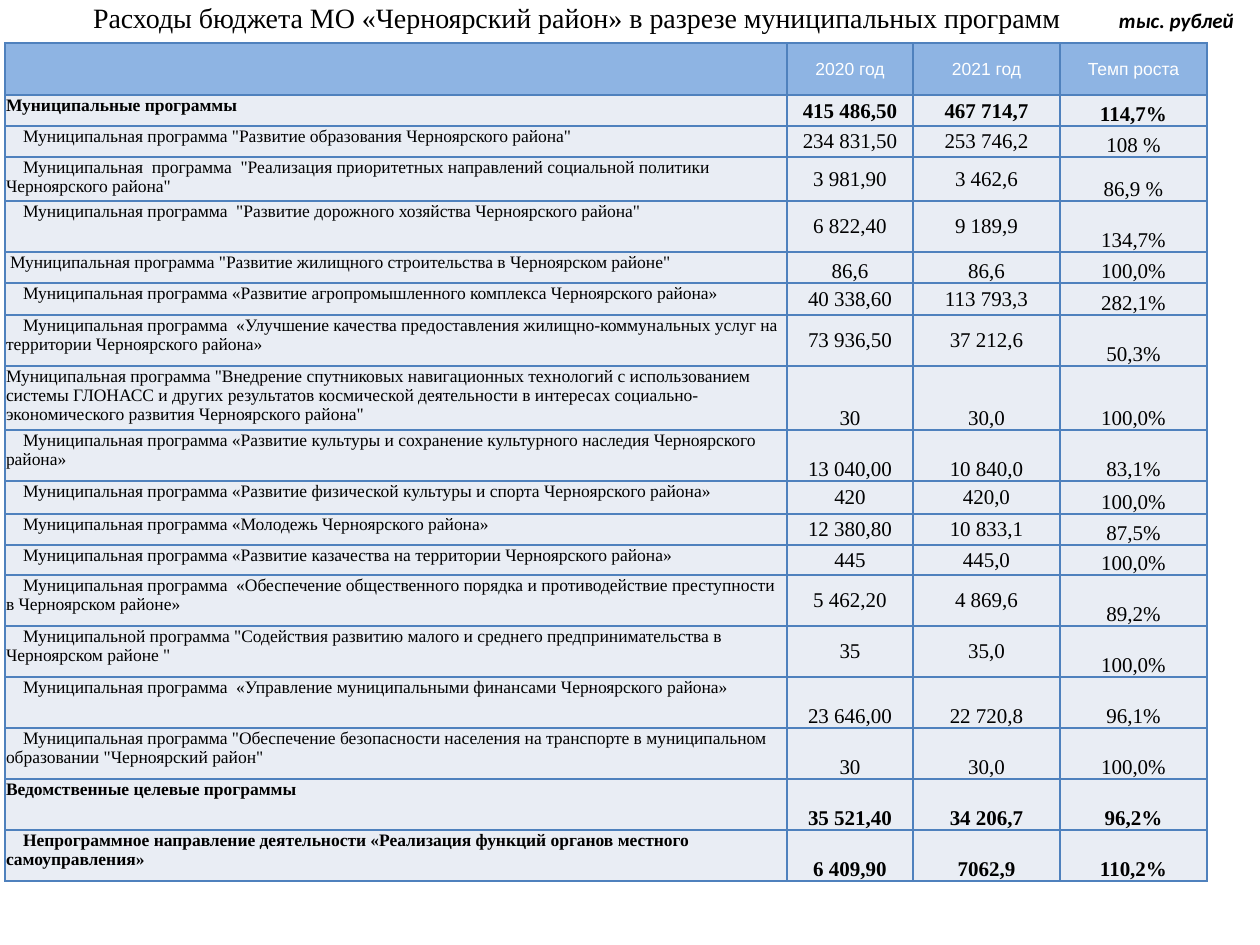
from typing import NamedTuple

from lxml import etree
from pptx import Presentation
from pptx.dml.color import RGBColor
from pptx.enum.text import MSO_ANCHOR, PP_ALIGN
from pptx.oxml.ns import qn
from pptx.util import Pt

TOP, MIDDLE, BOTTOM = MSO_ANCHOR.TOP, MSO_ANCHOR.MIDDLE, MSO_ANCHOR.BOTTOM
LEFT, CENTER = PP_ALIGN.LEFT, PP_ALIGN.CENTER

BLACK = RGBColor(0x00, 0x00, 0x00)
WHITE = RGBColor(0xFF, 0xFF, 0xFF)
HEADER_FILL = RGBColor(0x8E, 0xB4, 0xE3)
BODY_FILL = RGBColor(0xE9, 0xED, 0xF4)
BORDER = RGBColor(0x4F, 0x81, 0xBD)

PX_PER_INCH = 126
INDENT = 17
COLUMNS = (782, 126, 147, 147)
HEADER = ("", "2020 год", "2021 год", "Темп роста")
HEADER_HEIGHT = 52


class Style(NamedTuple):
    font: str
    size: int
    color: RGBColor = BLACK
    bold: bool = False
    italic: bool = False


class Program(NamedTuple):
    name: str
    y2020: str
    y2021: str
    growth: str
    height: int = 51
    anchor: MSO_ANCHOR = MIDDLE
    indent: int = INDENT
    bold: bool = False


PROGRAMS = (
    Program("Муниципальные программы", "415 486,50", "467 714,7", "114,7%",
            31, indent=0, bold=True),
    Program('Муниципальная программа "Развитие образования Черноярского района"',
            "234 831,50", "253 746,2", "108 %", 31),
    Program('Муниципальная  программа  "Реализация приоритетных направлений '
            'социальной политики Черноярского района"',
            "3 981,90", "3 462,6", "86,9 %", 44),
    Program('Муниципальная программа  "Развитие дорожного хозяйства Черноярского района"',
            "6 822,40", "9 189,9", "134,7%"),
    Program('Муниципальная программа "Развитие жилищного строительства в Черноярском районе"',
            "86,6", "86,6", "100,0%", 31, BOTTOM, indent=4),
    Program("Муниципальная программа «Развитие агропромышленного комплекса "
            "Черноярского района»", "40 338,60", "113 793,3", "282,1%", 32),
    Program("Муниципальная программа  «Улучшение качества предоставления "
            "жилищно-коммунальных услуг на территории Черноярского района»",
            "73 936,50", "37 212,6", "50,3%"),
    Program('Муниципальная программа "Внедрение спутниковых навигационных технологий '
            'с использованием системы ГЛОНАСС и других результатов космической '
            'деятельности в интересах социально-экономического развития '
            'Черноярского района"', "30", "30,0", "100,0%", 64, BOTTOM, indent=0),
    Program("Муниципальная программа «Развитие культуры и сохранение культурного "
            "наследия Черноярского района»",
            "13 040,00", "10 840,0", "83,1%", anchor=BOTTOM),
    Program("Муниципальная программа «Развитие физической культуры и спорта "
            "Черноярского района»", "420", "420,0", "100,0%", 33),
    Program("Муниципальная программа «Молодежь Черноярского района»",
            "12 380,80", "10 833,1", "87,5%", 31),
    Program("Муниципальная программа «Развитие казачества на территории "
            "Черноярского района»", "445", "445,0", "100,0%", 30),
    Program("Муниципальная программа  «Обеспечение общественного порядка и "
            "противодействие преступности в Черноярском районе»",
            "5 462,20", "4 869,6", "89,2%"),
    Program('Муниципальной программа "Содействия развитию малого и среднего '
            'предпринимательства в Черноярском районе "', "35", "35,0", "100,0%"),
    Program("Муниципальная программа  «Управление муниципальными финансами "
            "Черноярского района»", "23 646,00", "22 720,8", "96,1%", anchor=BOTTOM),
    Program('Муниципальная программа "Обеспечение безопасности населения на транспорте '
            'в муниципальном образовании "Черноярский район"',
            "30", "30,0", "100,0%", anchor=BOTTOM),
    Program("Ведомственные целевые программы", "35 521,40", "34 206,7", "96,2%",
            anchor=BOTTOM, indent=0, bold=True),
    Program("Непрограммное направление деятельности «Реализация функций органов "
            "местного самоуправления»", "6 409,90", "7062,9", "110,2%",
            anchor=BOTTOM, bold=True),
)


def px(n: int) -> int:
    return round(n * 914400 / PX_PER_INCH)


def write(tf, text: str, style: Style, align: PP_ALIGN, indent: int = 0) -> None:
    p = tf.paragraphs[0]
    p.alignment = align
    if indent:
        p._p.get_or_add_pPr().set("indent", str(px(indent)))
    if not text:
        return
    r = p.add_run()
    r.text = text
    font = r.font
    font.name, font.size = style.font, Pt(style.size)
    font.bold, font.italic = style.bold, style.italic
    font.color.rgb = style.color


def add_label(slide, box: tuple[int, int, int, int], text: str,
              style: Style, align: PP_ALIGN, indent: int = 0) -> None:
    tf = slide.shapes.add_textbox(*map(px, box)).text_frame
    tf.margin_left = tf.margin_top = tf.margin_right = tf.margin_bottom = 0
    tf.word_wrap = True
    write(tf, text, style, align, indent)


def add_borders(cell) -> None:
    tc_pr = cell._tc.get_or_add_tcPr()
    for side in ("lnL", "lnR", "lnT", "lnB"):
        ln = etree.SubElement(tc_pr, qn(f"a:{side}"), w=str(Pt(1)))
        fill = etree.SubElement(ln, qn("a:solidFill"))
        etree.SubElement(fill, qn("a:srgbClr"), val=str(BORDER))


def fill_cell(cell, text: str, style: Style, fill: RGBColor, anchor: MSO_ANCHOR,
              align: PP_ALIGN = CENTER, indent: int = 0) -> None:
    cell.margin_left = cell.margin_top = cell.margin_right = px(1)
    cell.margin_bottom = 0
    cell.vertical_anchor = anchor
    add_borders(cell)
    cell.fill.solid()
    cell.fill.fore_color.rgb = fill
    write(cell.text_frame, text, style, align, indent)


def add_budget_table(slide, left: int, top: int) -> None:
    heights = [HEADER_HEIGHT] + [program.height for program in PROGRAMS]
    table = slide.shapes.add_table(len(heights), len(COLUMNS), px(left), px(top),
                                   px(sum(COLUMNS)), px(sum(heights))).table
    table.first_row = table.horz_banding = False
    for column, width in zip(table.columns, COLUMNS):
        column.width = px(width)
    for row, height in zip(table.rows, heights):
        row.height = px(height)

    for col, text in enumerate(HEADER):
        fill_cell(table.cell(0, col), text, Style("Arial", 10, WHITE), HEADER_FILL, MIDDLE)
    for row, program in enumerate(PROGRAMS, start=1):
        name_style = Style("Times New Roman", 10, bold=program.bold)
        value_style = name_style._replace(size=12)
        fill_cell(table.cell(row, 0), program.name, name_style, BODY_FILL,
                  TOP, LEFT, program.indent)
        values = ((program.y2020, program.anchor), (program.y2021, program.anchor),
                  (program.growth, BOTTOM))
        for col, (text, anchor) in enumerate(values, start=1):
            fill_cell(table.cell(row, col), text, value_style, BODY_FILL, anchor)


def main() -> None:
    prs = Presentation()
    prs.slide_width, prs.slide_height = px(1260), px(945)
    slide = prs.slides.add_slide(prs.slide_layouts[6])
    add_label(slide, (-53, 1, 1260, 34),
              "Расходы бюджета МО «Черноярский район» в разрезе муниципальных программ",
              Style("Times New Roman", 16), CENTER)
    add_label(slide, (1118, 8, 139, 25), "тыс. рублей",
              Style("Calibri", 12, bold=True, italic=True), LEFT, indent=1)
    add_budget_table(slide, 5, 43)
    prs.save("out.pptx")


if __name__ == "__main__":
    main()
